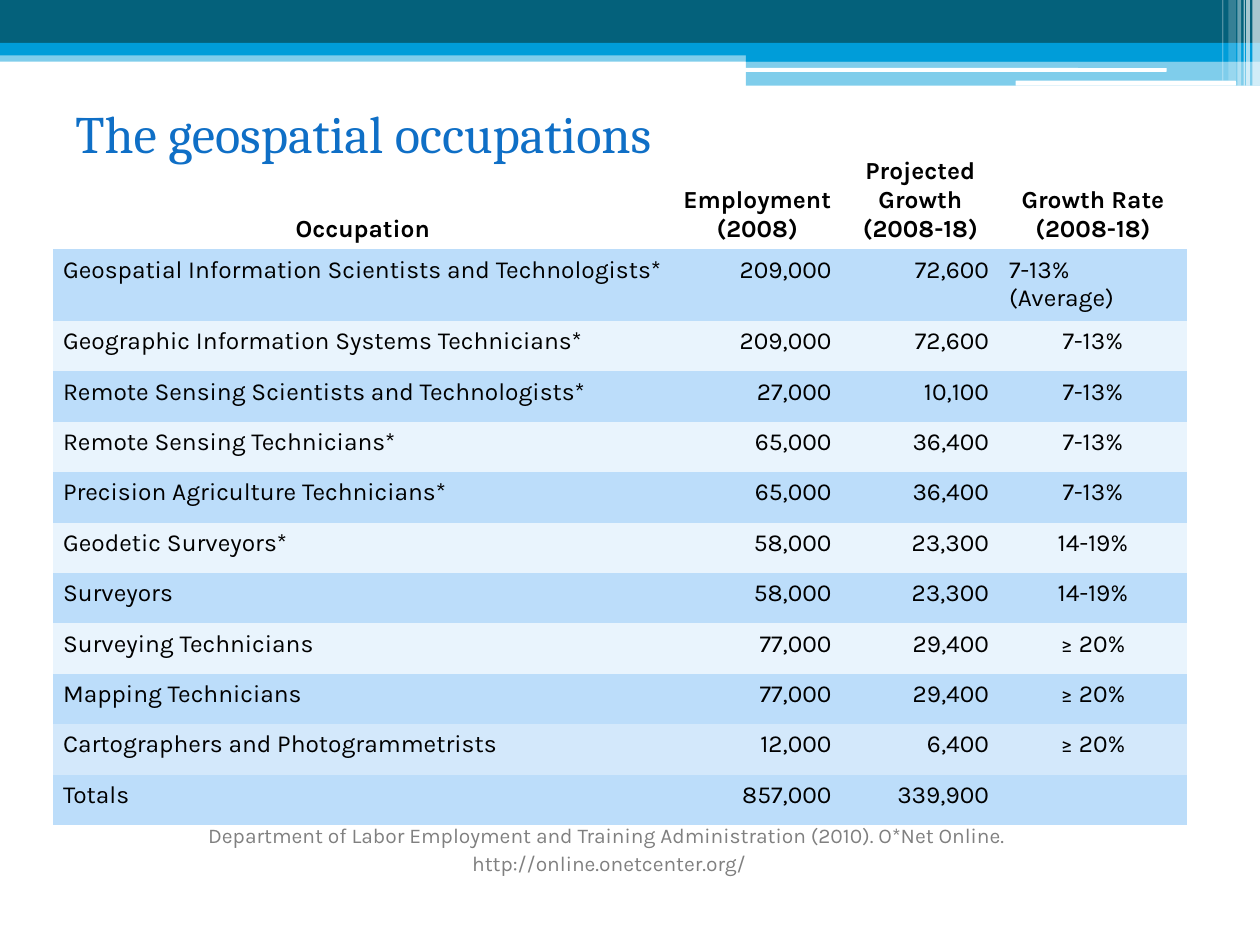
from dataclasses import dataclass

from lxml.etree import SubElement
from pptx import Presentation
from pptx.dml.color import RGBColor
from pptx.enum.shapes import MSO_SHAPE as Shape
from pptx.enum.text import MSO_ANCHOR as Anchor, PP_ALIGN as Align
from pptx.oxml.ns import qn
from pptx.util import Inches, Pt


@dataclass(frozen=True)
class Theme:
    """Colours, fonts and type sizes of the slide."""
    teal: str = "04617B"
    cyan: str = "009DD9"
    white: str = "FFFFFF"
    title: str = "0F6FC6"
    ink: str = "000000"
    grey: str = "808080"
    band_dark: str = "BCDDFA"
    band_light: str = "E9F4FD"
    band_mid: str = "D3E8FB"
    heading_font: str = "Cambria"
    body_font: str = "Karla"
    title_size: int = 30
    table_size: int = 14
    source_size: int = 12


THEME = Theme()
NO_STYLE_NO_GRID = "{2D5ABB26-0587-4C30-8999-92F81FD0307C}"

BANDS = [
    (0, 0.4, 10, 0.09, THEME.cyan, 50),
    (0, 0, 10, 0.34, THEME.teal, 100),
    (0, 0.34, 10, 0.1, THEME.cyan, 100),
    (5.92, 0.39, 4.08, 0.1, THEME.cyan, 100),
    (5.92, 0.48, 4.08, 0.2, THEME.cyan, 50),
]
WHITE_BARS = [(5.91, 0.54, 3.35, 0.03), (8.06, 0.64, 1.75, 0.04)]
STRIPES = [
    (9.94, 0.06, 0.68, 65),
    (9.89, 0.03, 0.68, 65),
    (9.87, 0.01, 0.68, 60),
    (9.82, 0.03, 0.68, 40),
    (9.75, 0.06, 0.64, 20),
    (9.7, 0.01, 0.64, 30),
]

COLUMN_WIDTHS = [4.92, 1.34, 1.25, 1.49]
ROW_HEIGHTS = [0.86, 0.39] + [0.4] * 10
COLUMN_ALIGNS = [Align.LEFT, Align.RIGHT, Align.RIGHT, Align.CENTER]
HEADINGS = ["Occupation", "Employment\n(2008)", "Projected Growth (2008-18)",
            "Growth Rate\n(2008-18)"]
OCCUPATIONS = [
    ("Geospatial Information Scientists and Technologists*", "209,000", "72,600",
     "7-13% (Average)"),
    ("Geographic Information Systems Technicians*", "209,000", "72,600", "7-13%"),
    ("Remote Sensing Scientists and Technologists*", "27,000", "10,100", "7-13%"),
    ("Remote Sensing Technicians*", "65,000", "36,400", "7-13%"),
    ("Precision Agriculture Technicians*", "65,000", "36,400", "7-13%"),
    ("Geodetic Surveyors*", "58,000", "23,300", "14-19%"),
    ("Surveyors", "58,000", "23,300", "14-19%"),
    ("Surveying Technicians", "77,000", "29,400", "≥ 20%"),
    ("Mapping Technicians", "77,000", "29,400", "≥ 20%"),
    ("Cartographers and Photogrammetrists", "12,000", "6,400", "≥ 20%"),
    ("Totals", "857,000", "339,900", ""),
]
SOURCE = ("Department of Labor Employment and Training Administration (2010). "
          "O*Net Online. \nhttp://online.onetcenter.org/")


def add_bar(page, left, top, width, height, color, opacity=100, kind=Shape.RECTANGLE):
    """Add a borderless filled bar, opacity given in percent."""
    bar = page.shapes.add_shape(kind, Inches(left), Inches(top), Inches(width), Inches(height))
    bar.shadow.inherit = False
    bar.line.fill.background()
    bar.fill.solid()
    bar.fill.fore_color.rgb = RGBColor.from_string(color)
    if opacity < 100:
        tint = bar.fill._xPr.find(qn("a:solidFill"))[0]
        SubElement(tint, qn("a:alpha")).set("val", str(opacity * 1000))


def write_text(frame, text, font, size, color, align, bold=False):
    """Fill a text frame with one evenly styled paragraph per line."""
    frame.text = text
    for para in frame.paragraphs:
        para.alignment = align
        para.font.name = font
        para.font.size = Pt(size)
        para.font.bold = bold
        para.font.color.rgb = RGBColor.from_string(color)


def add_text(page, left, top, width, height, *style):
    """Add a wrapping text box and return its paragraphs."""
    box = page.shapes.add_textbox(Inches(left), Inches(top), Inches(width), Inches(height))
    box.text_frame.word_wrap = True
    write_text(box.text_frame, *style)
    return box.text_frame.paragraphs


def add_header_art(page):
    """Draw the coloured bands, white bars and stripes along the top."""
    for band in BANDS:
        add_bar(page, *band)
    for bar in WHITE_BARS:
        add_bar(page, *bar, THEME.white, kind=Shape.ROUNDED_RECTANGLE)
    for left, width, height, opacity in STRIPES:
        add_bar(page, left, 0, width, height, THEME.white, opacity)


def add_title(page):
    """Add the slide title with its hanging indent."""
    para = add_text(page, 0.5, 0.75, 8.83, 0.61, "The geospatial occupations",
                    THEME.heading_font, THEME.title_size, THEME.title, Align.LEFT)[0]
    para.space_after = Pt(8)
    indent = para._p.get_or_add_pPr()
    indent.set("marL", str(Inches(0.5)))
    indent.set("indent", str(Inches(-0.5)))


def add_source(page):
    """Add the centred source note under the table."""
    for para in add_text(page, 1, 6.46, 7.67, 0.54, SOURCE, THEME.body_font,
                         THEME.source_size, THEME.grey, Align.CENTER):
        para.line_spacing = 1.1


def fill_cell(cell, text, align, color=None):
    """Write one table cell; a cell without colour is a heading."""
    cell.margin_left = cell.margin_right = Inches(0.08)
    cell.margin_top = cell.margin_bottom = Inches(0.05)
    write_text(cell.text_frame, text, THEME.body_font, THEME.table_size, THEME.ink,
               align, bold=color is None)
    if color is None:
        cell.vertical_anchor = Anchor.BOTTOM
        cell.fill.background()
    else:
        cell.fill.solid()
        cell.fill.fore_color.rgb = RGBColor.from_string(color)


def row_color(index, name):
    """Return the band colour of a body row."""
    if name.startswith("Cartographers"):
        return THEME.band_mid
    return THEME.band_light if index % 2 else THEME.band_dark


def add_occupation_table(page):
    """Add the table of employment and growth by occupation."""
    table = page.shapes.add_table(len(ROW_HEIGHTS), len(COLUMN_WIDTHS), Inches(0.42),
                                  Inches(1.12), Inches(9), Inches(5.23)).table
    table._tbl.tblPr.find(qn("a:tableStyleId")).text = NO_STYLE_NO_GRID
    table.horz_banding = False
    for column, width in zip(table.columns, COLUMN_WIDTHS):
        column.width = Inches(width)
    for row, height in zip(table.rows, ROW_HEIGHTS):
        row.height = Inches(height)
    for column, heading in enumerate(HEADINGS):
        fill_cell(table.cell(0, column), heading, Align.CENTER)
    for index, values in enumerate(OCCUPATIONS):
        color = row_color(index, values[0])
        for column, (value, align) in enumerate(zip(values, COLUMN_ALIGNS)):
            if value.endswith("(Average)"):
                align = Align.LEFT
            fill_cell(table.cell(index + 1, column), value, align, color)


def main():
    """Build and save the slide."""
    deck = Presentation()
    deck.slide_width, deck.slide_height = Inches(10), Inches(7.5)
    page = deck.slides.add_slide(deck.slide_layouts[6])
    add_header_art(page)
    add_title(page)
    add_source(page)
    add_occupation_table(page)
    deck.save("out.pptx")


if __name__ == "__main__":
    main()
